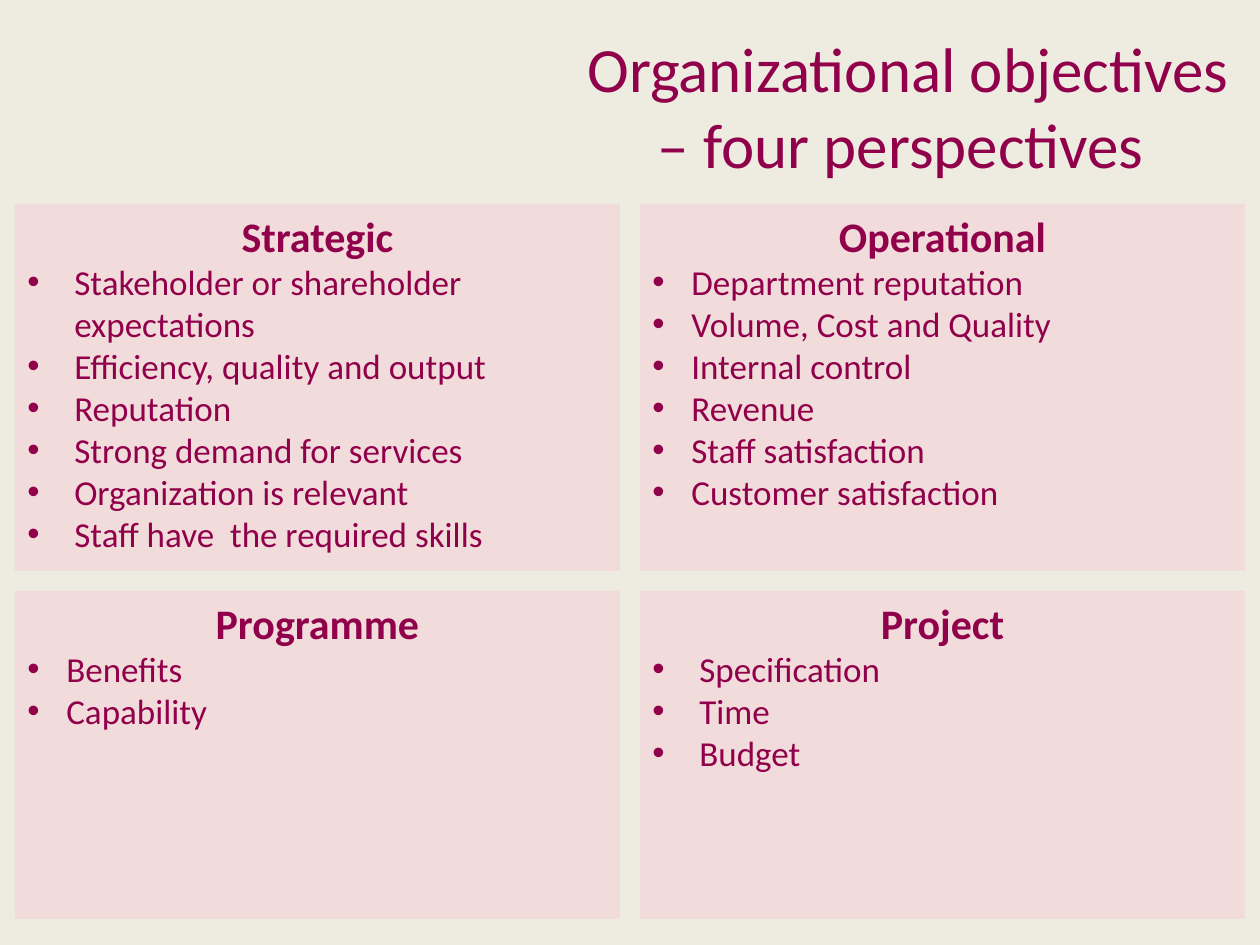
import dataclasses
import typing

import pptx
import pptx.dml.color
import pptx.enum.shapes
import pptx.enum.text
import pptx.util
from lxml import etree

SCALE = 914400 / 126  # EMU in one px
ALIGN = pptx.enum.text.PP_ALIGN
ANCHOR = pptx.enum.text.MSO_ANCHOR


@dataclasses.dataclass(frozen=True)
class Theme:
    back: str = "EEECE1"
    panel: str = "F2DCDB"
    ink: str = "91004B"
    face: str = "Calibri"
    title: int = 36
    head: int = 24
    body: int = 20


@dataclasses.dataclass(frozen=True)
class Panel:
    head: str
    items: tuple[str, ...]
    indent: int


THEME = Theme()
LEFTS = (15, 640)
WIDTH = 605
ROWS = ((204, 367), (591, 328))  # top and height
PANELS = (
    Panel("Strategic", (
        "Stakeholder or shareholder expectations",
        "Efficiency, quality and output",
        "Reputation",
        "Strong demand for services",
        "Organization is relevant",
        "Staff have  the required skills",
    ), 47),
    Panel("Operational", (
        "Department reputation",
        "Volume, Cost and Quality",
        "Internal control",
        "Revenue",
        "Staff satisfaction",
        "Customer satisfaction",
    ), 39),
    Panel("Programme", ("Benefits", "Capability"), 39),
    Panel("Project", ("Specification", "Time", "Budget"), 47),
)


def px(count: int) -> int:
    return round(count * SCALE)


def rgb(code: str) -> pptx.dml.color.RGBColor:
    return pptx.dml.color.RGBColor.from_string(code)


def apply(target: typing.Any, values: dict[str, typing.Any]) -> None:
    for name, value in values.items():
        setattr(target, name, value)


def bullet(para: typing.Any, indent: int) -> None:
    """Give the paragraph a round bullet with a hanging indent."""
    props = para._p.get_or_add_pPr()
    props.set("marL", str(px(indent)))
    props.set("indent", str(-px(indent)))
    for tag, key, value in (("buFont", "typeface", "Arial"), ("buChar", "char", "•")):
        etree.SubElement(props, pptx.oxml.ns.qn("a:" + tag)).set(key, value)


def write(para: typing.Any, text: str, size: int, bold: bool, align: typing.Any) -> None:
    para.text = text
    para.alignment = align
    apply(para.font, {"name": THEME.face, "size": pptx.util.Pt(size), "bold": bold})
    para.font.color.rgb = rgb(THEME.ink)


def title(slide: typing.Any, text: str) -> None:
    box = slide.shapes.add_textbox(px(561), px(16), px(694), px(179))
    apply(box.text_frame, {"word_wrap": True, "vertical_anchor": ANCHOR.MIDDLE})
    write(box.text_frame.paragraphs[0], text, THEME.title, False, ALIGN.CENTER)


def draw(slide: typing.Any, panel: Panel, left: int, top: int, height: int) -> None:
    kind = pptx.enum.shapes.MSO_SHAPE.RECTANGLE
    shape = slide.shapes.add_shape(kind, px(left), px(top), px(WIDTH), px(height))
    shape.shadow.inherit = False
    shape.fill.solid()
    shape.fill.fore_color.rgb = rgb(THEME.panel)
    shape.line.fill.background()
    frame = shape.text_frame
    apply(frame, {"word_wrap": True, "vertical_anchor": ANCHOR.TOP})
    write(frame.paragraphs[0], panel.head, THEME.head, True, ALIGN.CENTER)
    for item in panel.items:
        para = frame.add_paragraph()
        bullet(para, panel.indent)
        write(para, item, THEME.body, False, ALIGN.LEFT)


def main() -> None:
    deck = pptx.Presentation()
    apply(deck, {"slide_width": px(1260), "slide_height": px(945)})
    slide = deck.slides.add_slide(deck.slide_layouts[6])
    slide.background.fill.solid()
    slide.background.fill.fore_color.rgb = rgb(THEME.back)
    title(slide, "Organizational objectives – four perspectives ")
    for index, panel in enumerate(PANELS):
        row, column = divmod(index, len(LEFTS))
        draw(slide, panel, LEFTS[column], *ROWS[row])
    deck.save("out.pptx")


if __name__ == "__main__":
    main()
